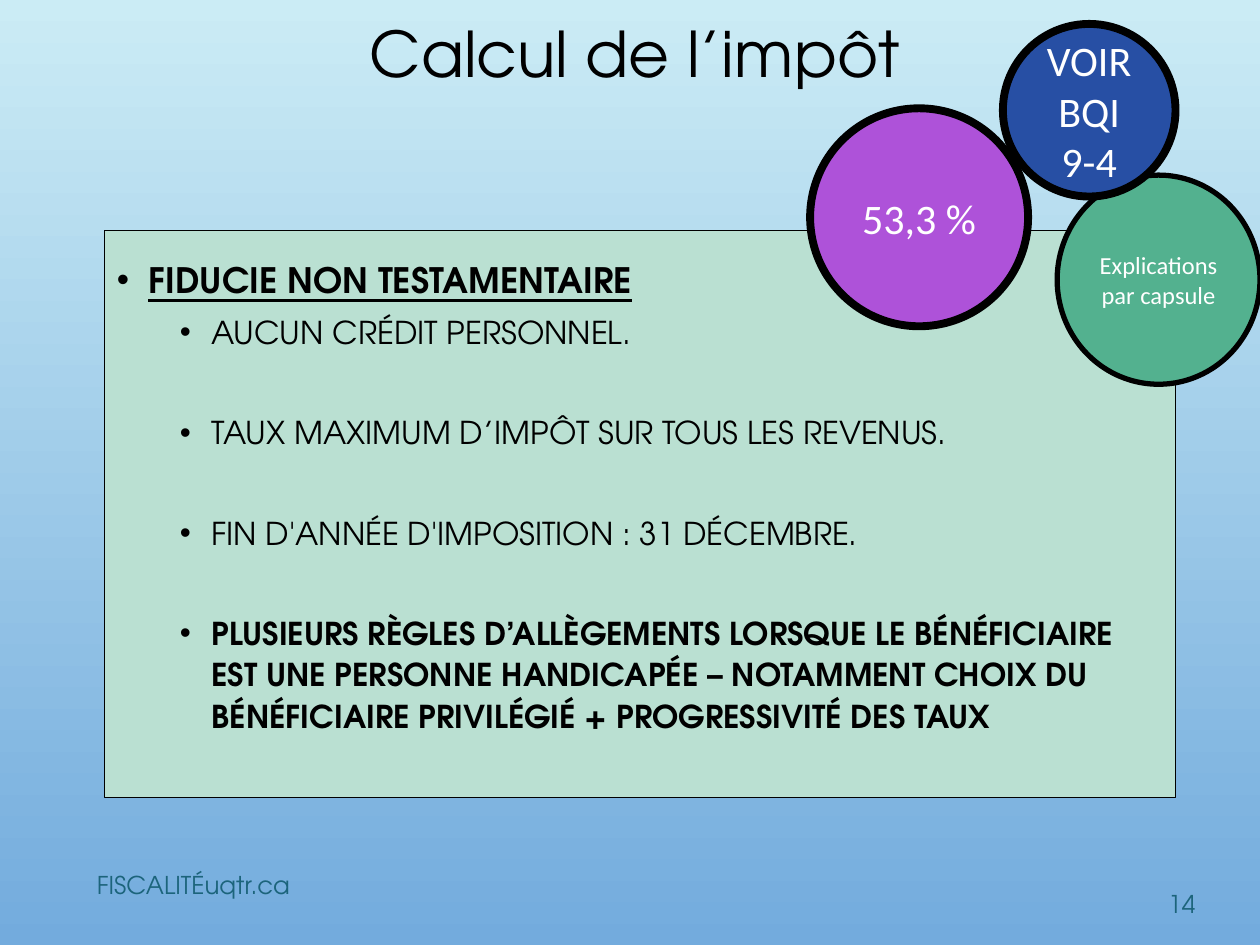
from dataclasses import dataclass

from lxml import etree
from pptx import Presentation
from pptx.dml.color import RGBColor
from pptx.enum.shapes import MSO_SHAPE
from pptx.enum.text import MSO_ANCHOR, PP_ALIGN
from pptx.oxml.ns import qn
from pptx.util import Inches, Pt

OVAL, RECT = MSO_SHAPE.OVAL, MSO_SHAPE.RECTANGLE
TOP, MIDDLE = MSO_ANCHOR.TOP, MSO_ANCHOR.MIDDLE
LEFT, CENTER = PP_ALIGN.LEFT, PP_ALIGN.CENTER


@dataclass(frozen=True)
class Theme:
    face: str = "TeX Gyre Adventor"
    round_face: str = "Calibri"
    sky: str = "CBECF5"
    blue: str = "73ABDD"
    ink: str = "000000"
    white: str = "FFFFFF"
    teal: str = "1C647B"
    mint: str = "BAE0D2"
    purple: str = "AE52D9"
    green: str = "53B18F"
    navy: str = "274FA4"
    title: int = 36
    big: int = 24
    head: int = 20
    body: int = 18
    small: int = 14


THEME = Theme()

HEAD = "FIDUCIE NON TESTAMENTAIRE"
POINTS = [
    "AUCUN CRÉDIT PERSONNEL.",
    "TAUX MAXIMUM D’IMPÔT SUR TOUS LES REVENUS.",
    "FIN D'ANNÉE D'IMPOSITION : 31 DÉCEMBRE.",
    "PLUSIEURS RÈGLES D’ALLÈGEMENTS LORSQUE LE BÉNÉFICIAIRE EST UNE "
    "PERSONNE HANDICAPÉE – NOTAMMENT CHOIX DU BÉNÉFICIAIRE PRIVILÉGIÉ "
    "+ PROGRESSIVITÉ DES TAUX",
]
BADGES = [
    ((6.43, 0.86, 1.73, 1.73), THEME.purple, 4.5, THEME.big, ["53,3 %"]),
    ((8.39, 1.39, 1.61, 1.66), THEME.green, 3, THEME.small,
     ["Explications par capsule"]),
    ((7.96, 0.19, 1.37, 1.37), THEME.navy, 4.5, THEME.big,
     ["VOIR", "BQI 9-4"]),
]


def style(para, size, color, face=THEME.face, bold=False):
    font = para.font
    font.name, font.size, font.bold = face, Pt(size), bold
    font.color.rgb = RGBColor.from_string(color)


def add_bullet(para, left):
    props = para._p.get_or_add_pPr()
    props.set("marL", str(Inches(left)))
    props.set("indent", str(Inches(-0.25)))
    tint = etree.SubElement(props, qn("a:buClr"))
    etree.SubElement(tint, qn("a:srgbClr"), val=THEME.ink)
    etree.SubElement(props, qn("a:buFont"), typeface="Arial")
    etree.SubElement(props, qn("a:buChar"), char="•")


def add_panel(slide, kind, box, fill, width):
    shape = slide.shapes.add_shape(kind, *map(Inches, box))
    shape.shadow.inherit = False
    shape.fill.solid()
    shape.fill.fore_color.rgb = RGBColor.from_string(fill)
    shape.line.color.rgb = RGBColor.from_string(THEME.ink)
    shape.line.width = Pt(width)
    return shape


def add_label(slide, box, text, size, color, align=LEFT, pad=0.1):
    frame = slide.shapes.add_textbox(*map(Inches, box)).text_frame
    frame.word_wrap = True
    frame.vertical_anchor = MIDDLE
    frame.margin_left = frame.margin_right = Inches(pad)
    para = frame.paragraphs[0]
    para.text, para.alignment = text, align
    style(para, size, color)
    return para


def add_list(slide, box):
    frame = add_panel(slide, RECT, box, THEME.mint, 0.75).text_frame
    frame.vertical_anchor = TOP
    frame.margin_top = Inches(0.19)
    for i, text in enumerate([HEAD, *POINTS]):
        para = frame.paragraphs[0] if i == 0 else frame.add_paragraph()
        para.text, para.alignment, para.line_spacing = text, LEFT, 1.1
        add_bullet(para, 0.75 if i else 0.25)
        style(para, THEME.body if i else THEME.head, THEME.ink,
              bold=i in (0, len(POINTS)))
        if i == 0:
            para.font.underline = True
        else:
            para.space_before = Pt(5 if i == 1 else 33.5)


def add_badge(slide, box, fill, width, size, lines):
    frame = add_panel(slide, OVAL, box, fill, width).text_frame
    frame.vertical_anchor = MIDDLE
    frame.text = "\n".join(lines)
    for para in frame.paragraphs:
        para.alignment = CENTER
        style(para, size, THEME.white, THEME.round_face)


def paint(slide):
    fill = slide.background.fill
    fill.gradient()
    fill.gradient_angle = 270
    for i, (stop, color) in enumerate(
            zip(fill.gradient_stops, (THEME.sky, THEME.blue))):
        stop.position = i
        stop.color.rgb = RGBColor.from_string(color)


def main():
    deck = Presentation()
    deck.slide_width, deck.slide_height = Inches(10), Inches(7.5)
    slide = deck.slides.add_slide(deck.slide_layouts[6])
    paint(slide)
    title = add_label(slide, (0.83, -0.05, 8.42, 1), "Calcul de l’impôt",
                      THEME.title, THEME.ink, CENTER)
    title.line_spacing = 0.9
    add_list(slide, (0.83, 1.83, 8.5, 4.5))
    add_label(slide, (0.67, 6.82, 5.93, 0.4), "FISCALITÉuqtr.ca",
              THEME.small, THEME.teal)
    add_label(slide, (9.18, 6.97, 0.4, 0.4), "14", THEME.small, THEME.teal,
              CENTER, 0.02)
    for badge in BADGES:
        add_badge(slide, *badge)
    deck.save("out.pptx")


if __name__ == "__main__":
    main()
